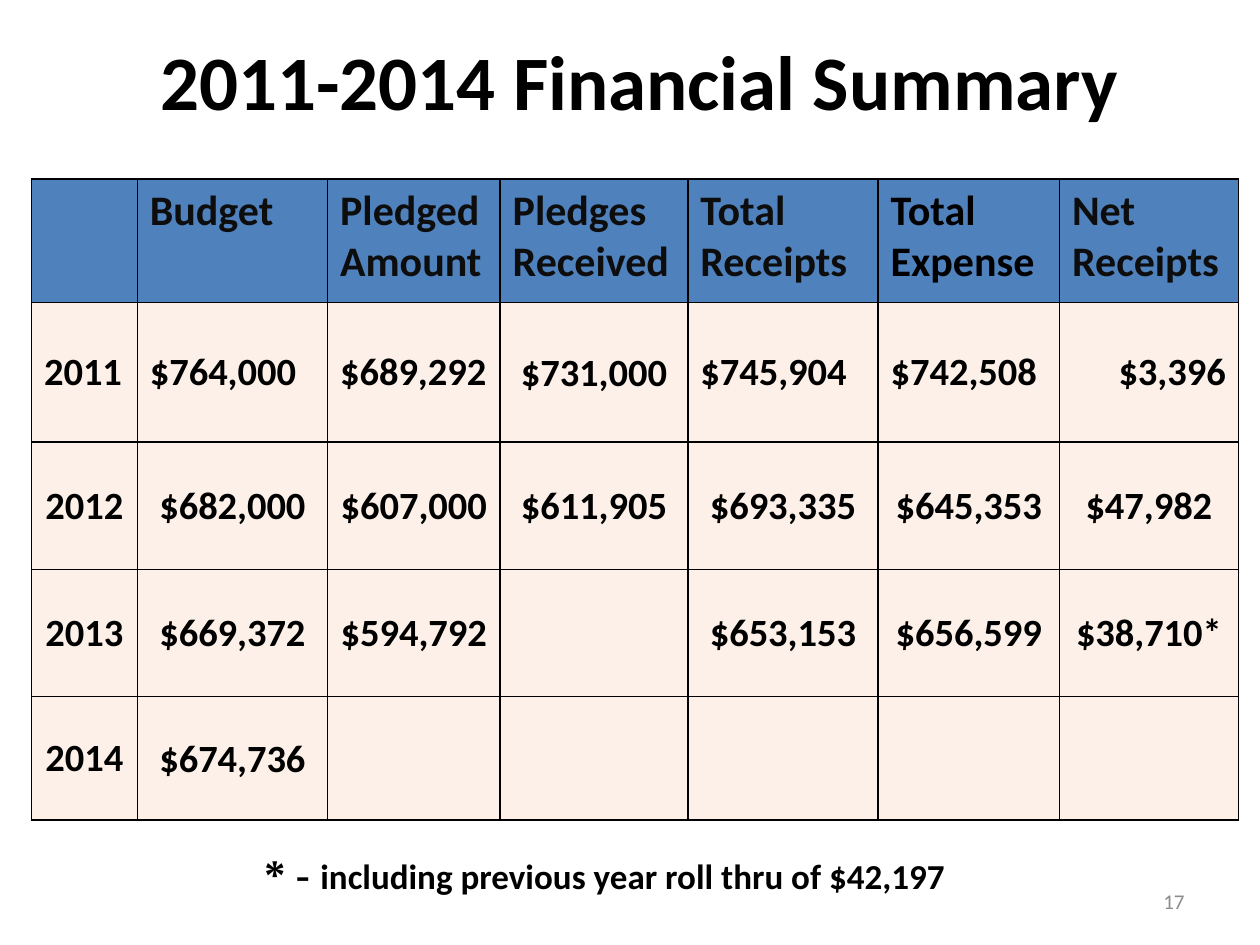
import pptx
import pptx.util
import pptx.dml.color
import pptx.enum.text
import pptx.oxml
import pptx.oxml.ns
from dataclasses import dataclass

Inch = pptx.util.Inches
Align = pptx.enum.text.PP_ALIGN
Anchor = pptx.enum.text.MSO_ANCHOR


@dataclass(frozen=True)
class Theme:
    ink: str = "000000"
    soft: str = "0D0D0D"
    gray: str = "8C8C8C"
    head: str = "4F81BD"
    body: str = "FCF0E8"
    sans: str = "Calibri"
    serif: str = "Times New Roman"
    title: int = 44
    large: int = 24
    cell: int = 22
    note: int = 20
    small: int = 12
    line: int = 1


THEME = Theme()
WIDTH, HEIGHT = 10, 7.5
COLS = [0.84, 1.51, 1.37, 1.49, 1.51, 1.44, 1.42]
ROWS = [0.98, 1.11, 1.01, 1.01, 0.98]
HEADS = ["", "Budget", "Pledged Amount", "Pledges Received",
         "Total Receipts", "Total Expense", "Net Receipts"]
YEARS = [
    ["2011", "$764,000", "$689,292", "$731,000", "$745,904", "$742,508", "$3,396"],
    ["2012", "$682,000", "$607,000", "$611,905", "$693,335", "$645,353", "$47,982"],
    ["2013", "$669,372", "$594,792", "", "$653,153", "$656,599", "$38,710*"],
    ["2014", "$674,736", "", "", "", "", ""],
]
FIRST = [Align.LEFT] * 3 + [Align.CENTER] + [Align.LEFT] * 2 + [Align.RIGHT]
TIGHT = {(1, 3), (2, 3), (2, 5), (3, 1), (3, 5), (4, 1)}


def style(font, size, color=THEME.ink, bold=True, name=THEME.sans):
    font.size = pptx.util.Pt(size)
    font.color.rgb = pptx.dml.color.RGBColor.from_string(color)
    font.bold = bold
    font.name = name


def add_box(slide, left, top, width, height, align, anchor):
    box = slide.shapes.add_textbox(
        Inch(left * WIDTH), Inch(top * HEIGHT), Inch(width * WIDTH), Inch(height * HEIGHT))
    frame = box.text_frame
    frame.word_wrap = True
    frame.vertical_anchor = anchor
    para = frame.paragraphs[0]
    para.alignment = align
    return para


def add_edges(cell):
    props = cell._tc.get_or_add_tcPr()
    for side in "LRTB":
        props.append(pptx.oxml.parse_xml(
            f'<a:ln{side} {pptx.oxml.ns.nsdecls("a")} w="{pptx.util.Pt(THEME.line)}">'
            f'<a:solidFill><a:srgbClr val="{THEME.ink}"/></a:solidFill></a:ln{side}>'))


def fill_cell(cell, text, fill, size, color, align, anchor, tight):
    add_edges(cell)
    cell.fill.solid()
    cell.fill.fore_color.rgb = pptx.dml.color.RGBColor.from_string(fill)
    cell.vertical_anchor = anchor
    if tight:
        cell.margin_left = cell.margin_right = cell.margin_top = Inch(0.01)
        cell.margin_bottom = 0
    para = cell.text_frame.paragraphs[0]
    para.text = text
    para.alignment = align
    style(para.font, size, color)


def add_grid(slide):
    table = slide.shapes.add_table(
        len(ROWS), len(COLS), Inch(0.25), Inch(1.42),
        Inch(sum(COLS)), Inch(sum(ROWS))).table
    table.first_row = table.horz_banding = False
    for col, width in zip(table.columns, COLS):
        col.width = Inch(width)
    for row, height in zip(table.rows, ROWS):
        row.height = Inch(height)
    for c, text in enumerate(HEADS):
        color = THEME.ink if text == "Total Expense" else THEME.soft
        fill_cell(table.cell(0, c), text, THEME.head, THEME.large, color,
                  Align.LEFT, Anchor.TOP, False)
    for r, year in enumerate(YEARS, 1):
        for c, text in enumerate(year):
            align = FIRST[c] if r == 1 else Align.CENTER
            fill_cell(table.cell(r, c), text, THEME.body, THEME.cell, THEME.ink,
                      align, Anchor.MIDDLE, (r, c) in TIGHT)


def add_line(slide, text, place, align, size, color, bold):
    para = add_box(slide, *place, align, Anchor.MIDDLE)
    para.text = text
    style(para.font, size, color, bold)


def add_note(slide):
    para = add_box(slide, 0.2, 0.89, 0.59, 0.07, Align.LEFT, Anchor.TOP)
    for text, size, name in [
        ("* - ", THEME.large, THEME.serif),
        ("including previous year roll thru of $42,197", THEME.note, THEME.sans),
    ]:
        run = para.add_run()
        run.text = text
        style(run.font, size, name=name)


def main():
    deck = pptx.Presentation()
    deck.slide_width, deck.slide_height = Inch(WIDTH), Inch(HEIGHT)
    slide = deck.slides.add_slide(deck.slide_layouts[6])
    add_line(slide, "2011-2014 Financial Summary", (0.033, 0.023, 0.95, 0.123),
             Align.CENTER, THEME.title, THEME.ink, True)
    add_grid(slide)
    add_line(slide, "17", (0.717, 0.927, 0.233, 0.053),
             Align.RIGHT, THEME.small, THEME.gray, False)
    add_note(slide)
    deck.save("out.pptx")


if __name__ == "__main__":
    main()
